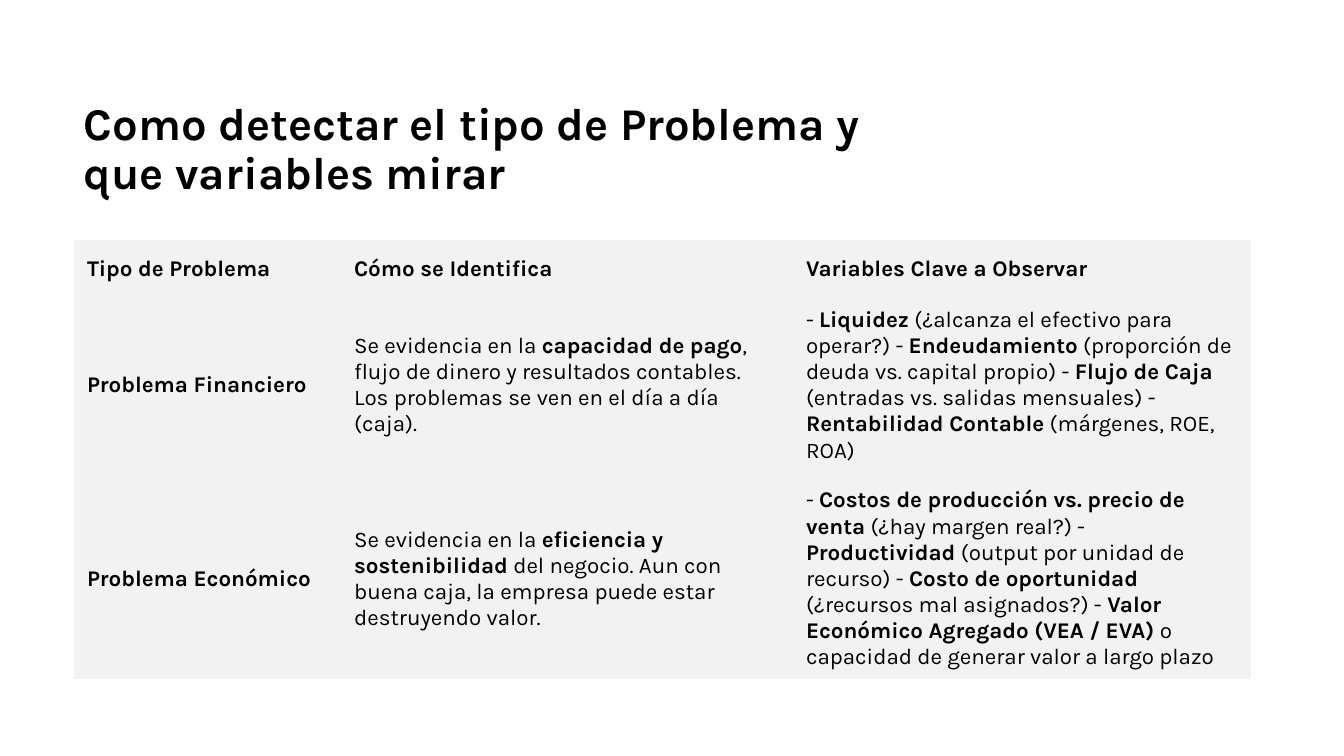
from dataclasses import dataclass
from pptx import Presentation
from pptx.dml.color import RGBColor as Color
from pptx.enum.text import MSO_ANCHOR as Anchor
from pptx.oxml.ns import qn
from pptx.util import Inches, Length, Pt


@dataclass(frozen=True)
class Theme:
    font: str = "Karla"
    ink: Color = Color(0, 0, 0)
    fill: Color = Color(0xF2, 0xF2, 0xF2)
    title: float = 32.4
    body: float = 16


@dataclass(frozen=True)
class Grid:
    wide: float = 13.33
    high: float = 7.5
    cols: int = 16
    rows: int = 9

    def x(self, count: float) -> Length:
        return Inches(self.wide * count / self.cols)

    def y(self, count: float) -> Length:
        return Inches(self.high * count / self.rows)


@dataclass(frozen=True)
class Row:
    high: float
    cells: tuple[str, str, str]


THEME = Theme()
GRID = Grid()
LEFT = 0.88
COLS = (3.18, 5.38, 5.45)
NO_STYLE = "{2D5ABB26-0587-4C30-8999-92F81FD0307C}"
TITLE = "*Como detectar el tipo de Problema y que variables mirar*"
ROWS = (
    Row(0.61, (
        "*Tipo de Problema*",
        "*Cómo se Identifica*",
        "*Variables Clave a Observar*",
    )),
    Row(1.49, (
        "*Problema Financiero*",
        "Se evidencia en la *capacidad de pago*, flujo de dinero y resultados "
        "contables. Los problemas se ven en el día a día (caja).",
        "- *Liquidez* (¿alcanza el efectivo para operar?) - *Endeudamiento* "
        "(proporción de deuda vs. capital propio) - *Flujo de Caja* (entradas vs. "
        "salidas mensuales) - *Rentabilidad Contable* (márgenes, ROE, ROA)",
    )),
    Row(2.18, (
        "*Problema Económico*",
        "Se evidencia en la *eficiencia y sostenibilidad* del negocio. Aun con "
        "buena caja, la empresa puede estar destruyendo valor.",
        "- *Costos de producción vs. precio de venta* (¿hay margen real?) - "
        "*Productividad* (output por unidad de recurso) - *Costo de oportunidad* "
        "(¿recursos mal asignados?) - *Valor Económico Agregado (VEA / EVA)* o "
        "capacidad de generar valor a largo plazo",
    )),
)


def write(frame, text: str, size: float) -> None:
    frame.word_wrap = True
    para = frame.paragraphs[0]
    for spot, part in enumerate(text.split("*")):
        if part:
            run = para.add_run()
            run.text = part
            run.font.name = THEME.font
            run.font.size = Pt(size)
            run.font.bold = spot % 2 == 1
            run.font.color.rgb = THEME.ink


def draw_title(slide) -> None:
    box = slide.shapes.add_textbox(GRID.x(LEFT), GRID.y(1.19), GRID.x(9.9), GRID.y(1.19))
    frame = box.text_frame
    write(frame, TITLE, THEME.title)
    frame.vertical_anchor = Anchor.MIDDLE
    frame.paragraphs[0].line_spacing = 0.9


def draw_cell(cell, text: str) -> None:
    cell.fill.solid()
    cell.fill.fore_color.rgb = THEME.fill
    cell.vertical_anchor = Anchor.MIDDLE
    cell.margin_left = cell.margin_top = cell.margin_right = Inches(0.13)
    cell.margin_bottom = Inches(0.06)
    write(cell.text_frame, text, THEME.body)


def draw_table(slide) -> None:
    high = GRID.y(4.94)
    shape = slide.shapes.add_table(
        len(ROWS), len(COLS), GRID.x(LEFT), GRID.y(2.86), GRID.x(sum(COLS)), high)
    table = shape.table
    table.first_row = table.horz_banding = False
    table._tbl.tblPr.find(qn("a:tableStyleId")).text = NO_STYLE
    for col, wide in zip(table.columns, COLS):
        col.width = GRID.x(wide)
    for line, row in zip(table.rows, ROWS):
        line.height = GRID.y(row.high)
        for cell, text in zip(line.cells, row.cells):
            draw_cell(cell, text)
    shape.height = high


def main() -> None:
    deck = Presentation()
    deck.slide_width = Inches(GRID.wide)
    deck.slide_height = Inches(GRID.high)
    slide = deck.slides.add_slide(deck.slide_layouts[6])
    draw_title(slide)
    draw_table(slide)
    deck.save("out.pptx")


if __name__ == "__main__":
    main()
